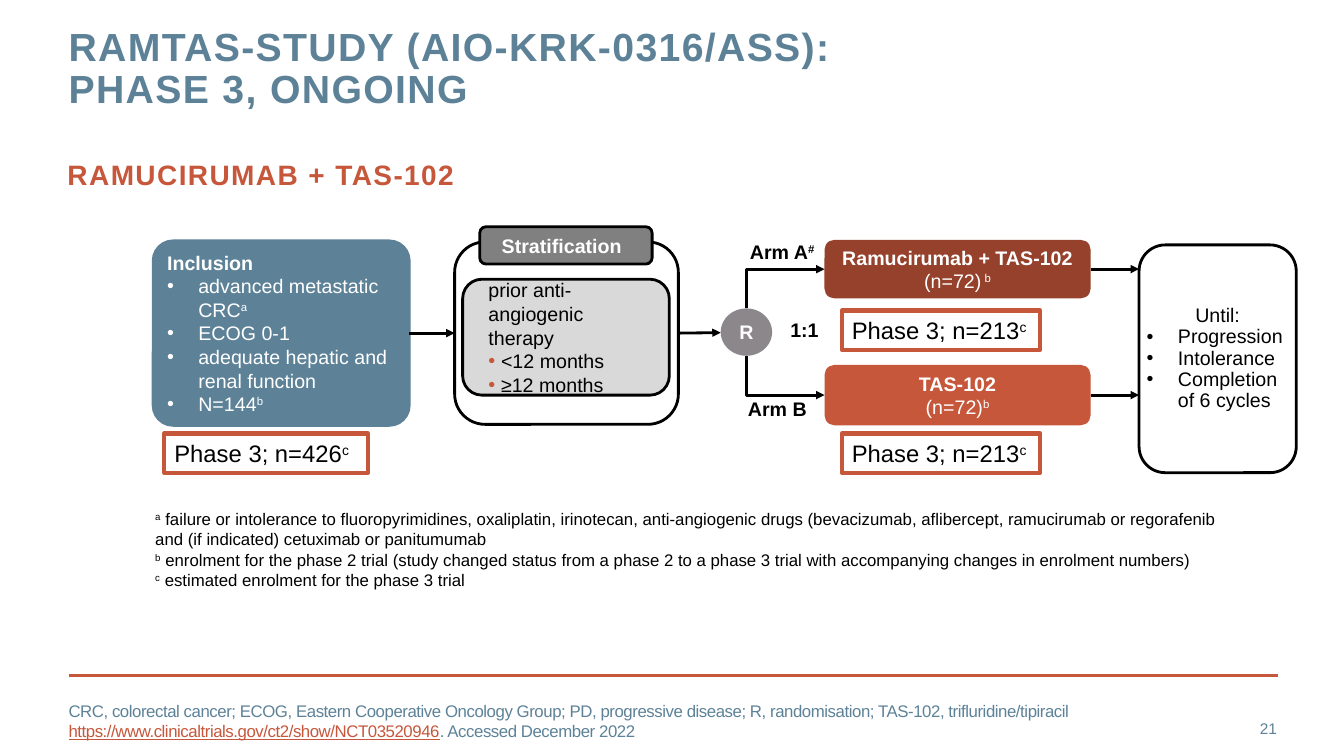
import pptx
import pptx.util
import pptx.dml.color
import pptx.enum.shapes
import pptx.enum.text
import pptx.oxml.ns
from lxml import etree

RGB = pptx.dml.color.RGBColor
BLUE = RGB(0x5D, 0x82, 0x98)
ORANGE = RGB(0xC6, 0x57, 0x3B)
BROWN = RGB(0x95, 0x41, 0x2B)
GREY = RGB(0x80, 0x80, 0x80)
LIGHT = RGB(0xD9, 0xD9, 0xD9)
MAUVE = RGB(0x8B, 0x87, 0x8B)
BLACK = RGB(0, 0, 0)
WHITE = RGB(0xFF, 0xFF, 0xFF)

MSO = pptx.enum.shapes.MSO_SHAPE
CXN = pptx.enum.shapes.MSO_CONNECTOR
ALIGN = pptx.enum.text.PP_ALIGN
ANCHOR = pptx.enum.text.MSO_ANCHOR
COLS, ROWS = 160, 90
INSETS = (1.2, 0.6, 1.2, 0.6)
qn = pptx.oxml.ns.qn


def bold(text):
    return text, {"bold": True}


def sup(text):
    return text, {"base": 30000}


class Deck:
    """Places styled elements on a grid of 160 columns by 90 rows."""

    def __init__(self):
        self.prs = pptx.Presentation()
        self.prs.slide_width = pptx.util.Inches(13.33)
        self.prs.slide_height = pptx.util.Inches(7.5)
        self.s = self.prs.slides.add_slide(self.prs.slide_layouts[5])

    def col(self, n):
        return round(self.prs.slide_width * n / COLS)

    def row(self, n):
        return round(self.prs.slide_height * n / ROWS)

    def place(self, c, r, w, h):
        return self.col(c), self.row(r), self.col(w), self.row(h)

    def fill_text(self, sp, paras, size=14, color=BLACK, align=ALIGN.LEFT, anchor=ANCHOR.TOP,
                  insets=INSETS, wrap=True, spacing=None, track=None):
        """Each paragraph is a list of runs; a leading Bullet turns on its bullet."""
        tf = sp.text_frame
        tf.auto_size = pptx.enum.text.MSO_AUTO_SIZE.NONE
        tf.word_wrap, tf.vertical_anchor = wrap, anchor
        tf.margin_left, tf.margin_right = self.col(insets[0]), self.col(insets[2])
        tf.margin_top, tf.margin_bottom = self.row(insets[1]), self.row(insets[3])
        for i, runs in enumerate(paras):
            p = tf.paragraphs[0] if i == 0 else tf.add_paragraph()
            p.alignment = align
            if spacing:
                p.line_spacing = spacing
            if isinstance(runs[0], Bullet):
                p.alignment = ALIGN.LEFT
                runs[0].apply(p, self.col(runs[0].indent))
                runs = runs[1:]
            for run in runs:
                text, style = (run, {}) if isinstance(run, str) else run
                if text == "\n":
                    p.add_line_break()
                    continue
                r = p.add_run()
                r.text = text
                r.font.name, r.font.size = "Arial", pptx.util.Pt(size)
                r.font.bold = style.get("bold", False)
                r.font.underline = style.get("underline", False)
                r.font.color.rgb = style.get("color", color)
                rpr = r._r.get_or_add_rPr()
                if "base" in style:
                    rpr.set("baseline", str(style["base"]))
                if track:
                    rpr.set("spc", str(track))

    def title(self, at, paras, **style):
        sp = self.s.shapes.title
        sp.left, sp.top, sp.width, sp.height = self.place(*at)
        self.fill_text(sp, paras, **style)

    def text(self, at, paras, **style):
        sp = self.s.shapes.add_textbox(*self.place(*at))
        self.fill_text(sp, paras, **style)

    def box(self, kind, at, fill=None, line=None, weight=2, paras=(), adj=None, **style):
        sp = self.s.shapes.add_shape(kind, *self.place(*at))
        sp.shadow.inherit = False
        if adj:
            sp.adjustments[0] = adj
        if fill is None:
            sp.fill.background()
        else:
            sp.fill.solid()
            sp.fill.fore_color.rgb = fill
        if line is None:
            sp.line.fill.background()
        else:
            sp.line.color.rgb, sp.line.width = line, pptx.util.Pt(weight)
        if paras:
            self.fill_text(sp, paras, **style)
        return sp

    def line(self, start, end, color=BLACK, begin=None, finish=None, arrow="tailEnd", bent=False):
        kind = CXN.ELBOW if bent else CXN.STRAIGHT
        cx = self.s.shapes.add_connector(kind, self.col(start[0]), self.row(start[1]),
                                         self.col(end[0]), self.row(end[1]))
        if begin:
            cx.begin_connect(begin, 3)
        if finish:
            cx.end_connect(finish, 1)
        cx.line.color.rgb, cx.line.width = color, pptx.util.Pt(2)
        sppr = cx._element.spPr
        if bent:
            sppr.find(qn("a:prstGeom")).set("prst", "bentConnector2")
        if arrow:
            etree.SubElement(sppr.find(qn("a:ln")), qn("a:" + arrow), type="triangle")
        etree.SubElement(sppr, qn("a:effectLst"))


class Bullet:
    def __init__(self, color, indent=3.72):
        self.color, self.indent = color, indent

    def apply(self, p, indent):
        ppr = p._p.get_or_add_pPr()
        ppr.set("marL", str(indent))
        ppr.set("indent", str(-indent))
        clr = etree.SubElement(ppr, qn("a:buClr"))
        etree.SubElement(clr, qn("a:srgbClr"), val=str(self.color))
        etree.SubElement(ppr, qn("a:buFont"), typeface="Arial")
        etree.SubElement(ppr, qn("a:buChar"), char="•")


def main():
    d = Deck()
    none = (0, 0, 0, 0)
    middle = {"anchor": ANCHOR.MIDDLE}

    # Headings
    d.title((8.16, 3.24, 116.28, 10.56),
            [[bold("RAMTAS-STUDY (AIO-KRK-0316/ASS):"), "\n", bold("PHASE 3, ONGOING")]],
            size=28, color=BLUE, insets=none, spacing=pptx.util.Pt(30), track=100)
    d.text((8.04, 18.72, 144, 9.24), [[bold("RAMUCIRUMAB + TAS-102")]],
           size=20, color=ORANGE, insets=none, track=100)

    # Inclusion criteria
    dot = Bullet(WHITE)
    inclusion = d.box(MSO.ROUNDED_RECTANGLE, (18.24, 28.68, 30.48, 21.96), BLUE, BLUE, adj=0.108,
                      paras=[[bold("Inclusion")],
                             [dot, "advanced metastatic CRC", sup("a")],
                             [dot, "ECOG 0-1"],
                             [dot, "adequate hepatic and renal function"],
                             [dot, "N=144", sup("b")]],
                      color=WHITE, insets=(0.96, 0.48, 0.96, 0.48), **middle)

    # Stratification
    strata = d.box(MSO.ROUNDED_RECTANGLE, (54.12, 28.8, 26.64, 21.72), line=BLACK)
    inner = {"insets": (2.4, 0.6, 1.2, 0.6), **middle}
    d.box(MSO.ROUNDED_RECTANGLE, (57.12, 27, 20.52, 4.44), GREY, BLACK,
          paras=[[bold("Stratification")]], color=WHITE, **inner)
    dot = Bullet(ORANGE, 1.5)
    d.box(MSO.ROUNDED_RECTANGLE, (55.08, 33.24, 24.6, 13.8), LIGHT, BLACK,
          paras=[["prior anti-angiogenic therapy"], [dot, "<12 months"], [dot, "≥12 months"]], **inner)

    # Randomisation and treatment arms
    d.box(MSO.OVAL, (85.8, 36.72, 6.12, 5.64), MAUVE, paras=[[bold("R")]],
          color=WHITE, align=ALIGN.CENTER, wrap=False, **middle)
    d.text((92.88, 37.32, 5.76, 4.08), [[bold("1:1")]], wrap=False)
    for c, r, label in ((88.08, 27.96, [bold("Arm A"), ("#", {"bold": True, "base": 30000})]),
                        (87.84, 46.68, [bold("Arm B")])):
        d.text((c, r, 15, 4.08), [label])
    arms = [d.box(MSO.ROUNDED_RECTANGLE, (98.16, r, 31.68, h), fill,
                  paras=[[bold(drug), "\n", "(n=72)", sup(note)]], color=WHITE,
                  align=ALIGN.CENTER, insets=(0, 0.6, 0, 0.6), **middle)
            for r, h, fill, drug, note in ((28.56, 6.96, BROWN, "Ramucirumab + TAS-102", " b"),
                                           (43.44, 7.2, ORANGE, "TAS-102", "b"))]

    # Treatment end
    dot = Bullet(BLACK)
    d.box(MSO.ROUNDED_RECTANGLE, (135.6, 29.16, 18.72, 27.12), line=BLACK,
          paras=[["Until:"], [dot, "Progression"], [dot, "Intolerance"],
                 [dot, "Completion of 6 cycles"]],
          align=ALIGN.CENTER, insets=(0, 0.6, 0, 0.6), spacing=0.9, **middle)

    # Arrows
    d.line((48.72, 39.6), (54.12, 39.7), begin=inclusion, finish=strata)
    d.line((80.76, 39.7), (85.8, 39.6), begin=strata)
    for arm, r, edge in zip(arms, (32.04, 47.04), (36.72, 42.36)):
        d.line((98.16, r), (88.92, edge), arrow="headEnd", bent=True)
        d.line((129.84, r), (135.6, r), begin=arm)

    # Phase 3 enrolment
    for c, r, w, n in ((19.56, 51.6, 24.24, 426), (100.2, 36.96, 23.64, 213), (100.2, 51.6, 23.64, 213)):
        d.box(MSO.RECTANGLE, (c, r, w, 4.68), line=ORANGE, weight=3,
              paras=[[f"Phase 3; n={n}", sup("c")]], size=17, wrap=False)

    # Notes, sources and slide number
    d.text((17.28, 60, 128.88, 10.92), [
        [sup("a"), " failure or intolerance to fluoropyrimidines, oxaliplatin, irinotecan, anti-angiogenic drugs "
         "(bevacizumab, aflibercept, ramucirumab or regorafenib and (if indicated) cetuximab or panitumumab"],
        [sup("b"), " enrolment for the phase 2 trial (study changed status from a phase 2 to a phase 3 trial "
         "with accompanying changes in enrolment numbers)"],
        [sup("c"), " estimated enrolment for the phase 3 trial"]], size=12)
    d.line((8.16, 80.4), (152.16, 80.4), color=ORANGE, arrow=None)
    d.text((8.16, 83.4, 123.84, 4.8), [[
        "CRC, colorectal cancer; ECOG, Eastern Cooperative Oncology Group; PD, progressive disease; "
        "R, randomisation; TAS-102, trifluridine/tipiracil ",
        ("https://www.clinicaltrials.gov/ct2/show/NCT03520946", {"color": ORANGE, "underline": True}),
        ". Accessed December 2022"]], size=12, color=BLUE, insets=none, track=-30, **middle)
    d.text((141.72, 84.36, 10.32, 4.8), [["21"]], size=11, color=BLUE,
           align=ALIGN.RIGHT, insets=none, **middle)

    d.prs.save("out.pptx")


if __name__ == "__main__":
    main()
